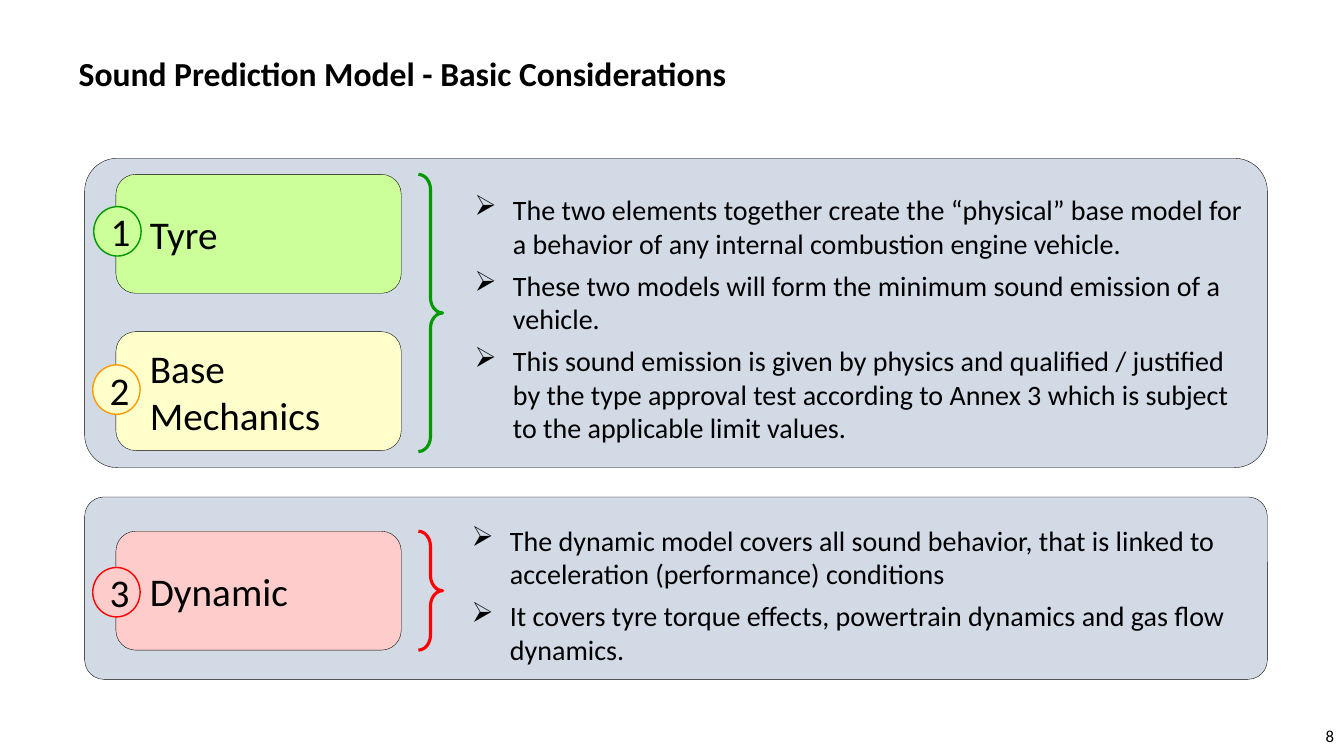
from lxml import etree
from pptx import Presentation
from pptx.dml.color import RGBColor
from pptx.enum import shapes as es, text as et
from pptx.oxml.ns import qn
from pptx.util import Inches, Pt

HEX = {
    "black": "000000", "panel": "D2DAE6",
    "lime": "CCFF99", "cream": "FFFFCC", "pink": "FFCCCC",
    "green": "009900", "orange": "FF9900", "red": "FF0000",
}
KIND = es.MSO_SHAPE
ALIGN = et.PP_ALIGN
ANCHOR = et.MSO_ANCHOR

MODELS = [
    ("1", "Tyre", 1.73, "lime", "green", 0.93, 2.05),
    ("2", "Base Mechanics", 3.29, "cream", "orange", 0.92, 3.62),
    ("3", "Dynamic", 5.27, "pink", "red", 0.92, 5.63),
]
BASE = [
    "The two elements together create the “physical” base model for a behavior of any internal combustion engine vehicle.",
    "These two models will form the minimum sound emission of a vehicle.",
    "This sound emission is given by physics and qualified / justified by the type approval test according to Annex 3 which is subject to the applicable limit values.",
]
DYNAMIC = [
    "The dynamic model covers all sound behavior, that is linked to acceleration (performance) conditions",
    "It covers tyre torque effects, powertrain dynamics and gas flow dynamics.",
]


def color(name):
    return RGBColor.from_string(HEX[name])


def style(para, size, align=ALIGN.LEFT, bold=False):
    para.alignment = align
    para.font.name = "Calibri"
    para.font.size = Pt(size)
    para.font.bold = bold
    para.font.color.rgb = color("black")


def add_shape(slide, kind, box, fill, line, width, adj=()):
    shape = slide.shapes.add_shape(kind, *map(Inches, box))
    shape.shadow.inherit = False
    if fill:
        shape.fill.solid()
        shape.fill.fore_color.rgb = color(fill)
    else:
        shape.fill.background()
    shape.line.color.rgb = color(line)
    shape.line.width = Pt(width)
    for i, value in enumerate(adj):
        shape.adjustments[i] = value
    return shape


def add_panel(slide, top, height):
    add_shape(slide, KIND.ROUNDED_RECTANGLE, (0.84, top, 11.73, height),
              "panel", "black", 0.25, [0.106])


def add_brace(slide, top, height, line):
    add_shape(slide, KIND.RIGHT_BRACE, (4.15, top, 0.24, height),
              None, line, 2.25, [0.627, 0.5])


def add_label(shape, label, align):
    frame = shape.text_frame
    frame.word_wrap = True
    frame.vertical_anchor = ANCHOR.MIDDLE
    frame.text = label
    style(frame.paragraphs[0], 28, align)


def add_model(slide, label, top, fill):
    card = add_shape(slide, KIND.ROUNDED_RECTANGLE, (1.15, top, 2.83, 1.18),
                     fill, "black", 0.25)
    card.text_frame.margin_left = Inches(0.28)
    card.text_frame.margin_right = Inches(0.04)
    add_label(card, label, ALIGN.LEFT)


def add_badge(slide, digit, left, top, fill, line):
    badge = add_shape(slide, KIND.OVAL, (left, top, 0.47, 0.49), fill, line, 1)
    add_label(badge, digit, ALIGN.CENTER)


def add_bullets(slide, box, lines):
    frame = slide.shapes.add_textbox(*map(Inches, box)).text_frame
    frame.word_wrap = True
    frame.auto_size = et.MSO_AUTO_SIZE.SHAPE_TO_FIT_TEXT
    frame.text = "\n".join(lines)
    for para in frame.paragraphs:
        style(para, 20)
        para.space_before = Pt(6)
        props = para._p.get_or_add_pPr()
        props.set("marL", str(Inches(0.38)))
        props.set("indent", str(Inches(-0.38)))
        bullet = etree.Element(qn("a:buChar"), char="➢")
        props.find(qn("a:defRPr")).addprevious(bullet)


def set_title(slide, label):
    title = slide.shapes.title
    title.left, title.top = Inches(0.68), Inches(0.47)
    title.width, title.height = Inches(10.16), Inches(0.5)
    frame = title.text_frame
    frame.text = label
    frame.vertical_anchor = ANCHOR.TOP
    frame.auto_size = et.MSO_AUTO_SIZE.NONE
    style(frame.paragraphs[0], 24, bold=True)


def add_number(slide, label):
    box = slide.shapes.add_textbox(*map(Inches, (10.33, 7.1, 3, 0.4)))
    frame = box.text_frame
    frame.word_wrap = True
    frame.vertical_anchor = ANCHOR.MIDDLE
    frame.text = label
    style(frame.paragraphs[0], 12, ALIGN.RIGHT)


def main():
    deck = Presentation()
    deck.slide_width, deck.slide_height = Inches(13.33), Inches(7.5)
    slide = deck.slides.add_slide(deck.slide_layouts.get_by_name("Title Only"))
    set_title(slide, "Sound Prediction Model - Basic Considerations")
    add_panel(slide, 4.93, 1.81)
    add_panel(slide, 1.57, 3.07)
    add_bullets(slide, (4.61, 1.86, 7.94, 2.63), BASE)
    add_bullets(slide, (4.58, 5.14, 7.94, 1.53), DYNAMIC)
    add_brace(slide, 1.73, 2.75, "green")
    add_brace(slide, 5.27, 1.18, "red")
    for digit, label, top, fill, line, left, level in MODELS:
        add_model(slide, label, top, fill)
        add_badge(slide, digit, left, level, fill, line)
    add_number(slide, "8")
    deck.save("out.pptx")


if __name__ == "__main__":
    main()
